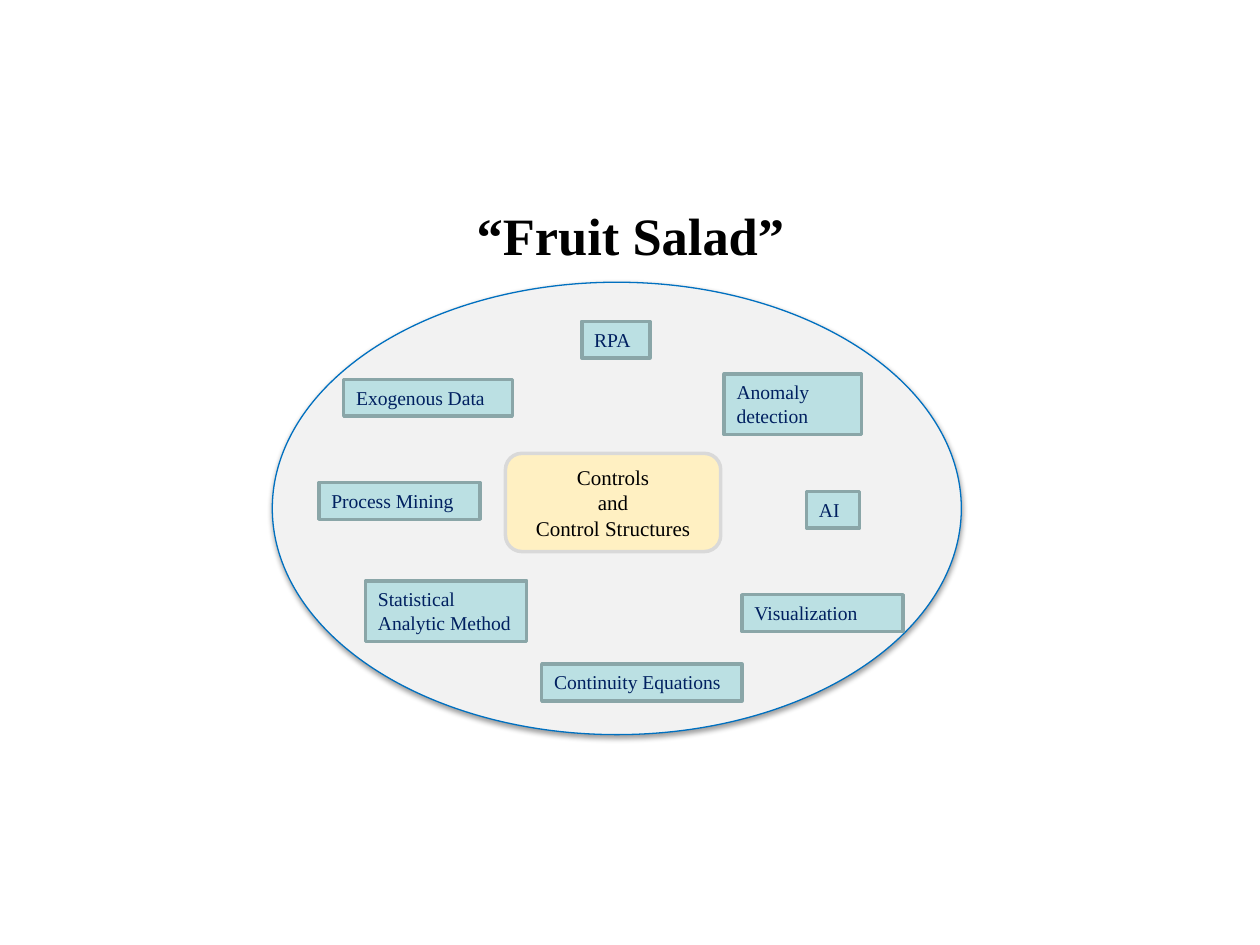
from lxml.etree import SubElement
from pptx import Presentation
from pptx.dml.color import RGBColor
from pptx.enum.shapes import MSO_SHAPE
from pptx.enum.text import MSO_ANCHOR, MSO_AUTO_SIZE, PP_ALIGN
from pptx.oxml.ns import qn
from pptx.util import Cm, Pt

FONT = "Times New Roman"
ONE_LINE, TWO_LINES = 0.74, 1.22
INGREDIENTS = [
    ("Anomaly detection", 14.6, 7.54, 2.77, TWO_LINES),
    ("Visualization", 14.96, 11.99, 3.25, ONE_LINE),
    ("Statistical Analytic Method", 7.37, 11.71, 3.25, TWO_LINES),
    ("Exogenous Data", 6.93, 7.65, 3.4, ONE_LINE),
    ("Process Mining", 6.43, 9.73, 3.25, ONE_LINE),
    ("Continuity Equations", 10.92, 13.39, 4.04, ONE_LINE),
    ("AI", 16.26, 9.91, 1.07, ONE_LINE),
    ("RPA", 11.73, 6.48, 1.37, ONE_LINE),
]


def color(value):
    return RGBColor.from_string(value)


def write(frame, lines, size, ink, align=PP_ALIGN.LEFT, bold=False):
    frame.word_wrap = True
    frame.text = "\n".join(lines)
    for paragraph in frame.paragraphs:
        paragraph.alignment = align
        paragraph.font.name = FONT
        paragraph.font.size = Pt(size)
        paragraph.font.bold = bold
        paragraph.font.color.rgb = color(ink)


def add_panel(slide, kind, box, fill, outline, width):
    panel = slide.shapes.add_shape(kind, *map(Cm, box))
    panel.shadow.inherit = False
    panel.fill.solid()
    panel.fill.fore_color.rgb = color(fill)
    panel.line.color.rgb = color(outline)
    panel.line.width = Pt(width)
    return panel


def add_title(slide, text):
    title = slide.shapes.add_textbox(Cm(9.09), Cm(3.68), Cm(16.3), Cm(2.08))
    frame = title.text_frame
    frame.margin_left = Cm(0.52)
    frame.vertical_anchor = MSO_ANCHOR.MIDDLE
    write(frame, [text], 30, "000000", bold=True)


def add_bowl(slide):
    bowl = add_panel(slide, MSO_SHAPE.OVAL, (5.49, 5.69, 13.89, 9.12),
                     "F2F2F2", "0070C0", 0.75)
    effects = bowl._element.spPr.find(qn("a:effectLst"))
    shadow = SubElement(effects, qn("a:outerShdw"), blurRad=str(Pt(3.1)),
                        dist=str(Pt(1.6)), dir="5400000", rotWithShape="0")
    shade = SubElement(shadow, qn("a:srgbClr"), val="000000")
    SubElement(shade, qn("a:alpha"), val="38000")


def add_ingredient(slide, name, *box):
    ingredient = add_panel(slide, MSO_SHAPE.RECTANGLE, box,
                           "BBE0E3", "8AA6A8", 2)
    frame = ingredient.text_frame
    frame.vertical_anchor = MSO_ANCHOR.TOP
    write(frame, [name], 11.2, "002060")
    frame.auto_size = MSO_AUTO_SIZE.SHAPE_TO_FIT_TEXT


def add_core(slide, lines):
    core = add_panel(slide, MSO_SHAPE.FLOWCHART_ALTERNATE_PROCESS,
                     (10.19, 9.14, 4.34, 1.98), "FFF0C2", "D9D9D9", 2)
    core.text_frame.vertical_anchor = MSO_ANCHOR.MIDDLE
    write(core.text_frame, lines, 12, "000000", PP_ALIGN.CENTER)


def main():
    deck = Presentation()
    deck.slide_width, deck.slide_height = Cm(25.4), Cm(19.05)
    slide = deck.slides.add_slide(deck.slide_layouts[6])
    add_title(slide, "“Fruit Salad”")
    add_bowl(slide)
    for ingredient in INGREDIENTS:
        add_ingredient(slide, *ingredient)
    add_core(slide, ["Controls", "and", "Control Structures"])
    deck.save("out.pptx")


if __name__ == "__main__":
    main()
